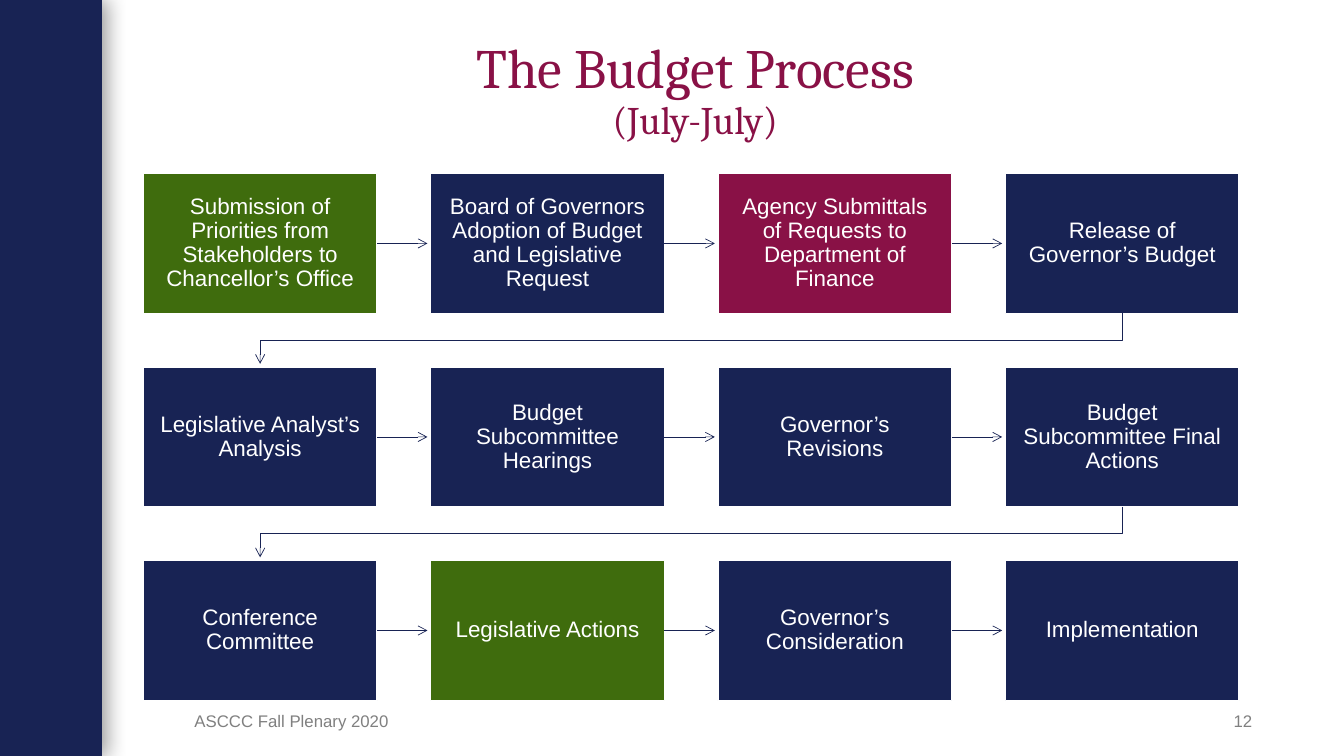
from lxml import etree
from pptx import Presentation
from pptx import util as u
from pptx.dml.color import RGBColor
from pptx.enum import shapes, text
from pptx.oxml import parse_xml
from pptx.oxml.ns import nsdecls, qn

NAVY = RGBColor(0x18, 0x23, 0x54)
GREEN = RGBColor(0x3F, 0x6C, 0x0D)
MAROON = RGBColor(0x89, 0x11, 0x46)
GRAY = RGBColor(0x80, 0x80, 0x80)
WHITE = RGBColor(0xFF, 0xFF, 0xFF)

SIDEBAR_SHADOW = (
    f'<a:effectLst {nsdecls("a")}>'
    '<a:outerShdw blurRad="190500" dist="38100" dir="0" algn="l" rotWithShape="0">'
    '<a:srgbClr val="000000"><a:alpha val="40000"/></a:srgbClr>'
    '</a:outerShdw></a:effectLst>'
)

STAGES = [
    [("Submission of Priorities from Stakeholders to Chancellor’s Office", GREEN),
     ("Board of Governors Adoption of Budget and Legislative Request", NAVY),
     ("Agency Submittals of Requests to Department of Finance", MAROON),
     ("Release of Governor’s Budget", NAVY)],
    [("Legislative Analyst’s Analysis", NAVY),
     ("Budget Subcommittee Hearings", NAVY),
     ("Governor’s Revisions", NAVY),
     ("Budget Subcommittee Final Actions", NAVY)],
    [("Conference Committee", NAVY),
     ("Legislative Actions", GREEN),
     ("Governor’s Consideration", NAVY),
     ("Implementation", NAVY)],
]


class ProcessSlide:
    body_font, title_font = "Arial", "Cambria"
    left, top = u.Inches(1.42), u.Inches(1.72)
    column, row = u.Inches(2.85), u.Inches(1.92)
    stage_width, stage_height = u.Inches(2.32), u.Inches(1.39)
    arrow_gap = u.Inches(0.03)

    def __init__(self, deck):
        self.width, self.height = deck.slide_width, deck.slide_height
        self.slide = deck.slides.add_slide(deck.slide_layouts[6])
        self.shapes = self.slide.shapes

    def share(self, x, y, w, h):
        return [round(percent * side / 100) for percent, side in
                zip((x, y, w, h), (self.width, self.height) * 2)]

    def cell(self, column, row):
        return self.left + column * self.column, self.top + row * self.row

    def rectangle(self, area, fill):
        block = self.shapes.add_shape(shapes.MSO_SHAPE.RECTANGLE, *area)
        block.shadow.inherit = False
        block.fill.solid()
        block.fill.fore_color.rgb = fill
        block.line.fill.background()
        return block

    def set_words(self, holder, lines, font, sizes, color, align, spacing=1.0):
        frame = holder.text_frame
        frame.word_wrap = True
        frame.vertical_anchor = text.MSO_ANCHOR.MIDDLE
        frame.text = "\n".join(lines)
        for paragraph, size in zip(frame.paragraphs, sizes):
            paragraph.alignment = align
            paragraph.line_spacing = spacing
            for run in paragraph.runs:
                run.font.name = font
                run.font.size = u.Pt(size)
                run.font.color.rgb = color
        return frame

    def sidebar(self, width):
        band = self.rectangle(self.share(0, 0, width, 100), NAVY)
        properties = band._element.spPr
        properties.replace(properties.find(qn("a:effectLst")),
                           parse_xml(SIDEBAR_SHADOW))

    def title(self, area, lines, sizes):
        self.set_words(self.shapes.add_textbox(*self.share(*area)), lines,
                       self.title_font, sizes, MAROON, text.PP_ALIGN.CENTER, 0.9)

    def footer(self, area, line, align):
        return self.set_words(self.shapes.add_textbox(*self.share(*area)), [line],
                              self.body_font, [12], GRAY, align)

    def stage(self, column, row, label, fill):
        block = self.rectangle((*self.cell(column, row),
                                self.stage_width, self.stage_height), fill)
        block.line.color.rgb = WHITE
        block.line.width = u.Pt(1)
        frame = self.set_words(block, [label], self.body_font, [16], WHITE,
                               text.PP_ALIGN.CENTER, 0.9)
        frame.margin_left = frame.margin_right = u.Inches(0.12)
        frame.margin_top = frame.margin_bottom = u.Inches(0.12)
        return block

    def arrow_line(self, line):
        line.color.rgb = NAVY
        line.width = u.Pt(0.5)
        etree.SubElement(line._get_or_add_ln(), qn("a:tailEnd"), type="arrow")

    def next_arrow(self, start, end):
        y = start.top + start.height // 2
        arrow = self.shapes.add_connector(
            shapes.MSO_CONNECTOR.STRAIGHT, start.left + start.width, y,
            end.left - self.arrow_gap, y)
        arrow.begin_connect(start, 3)
        self.arrow_line(arrow.line)
        etree.SubElement(arrow._element.spPr, qn("a:effectLst"))

    def return_arrow(self, start, end):
        start_x, end_x = (block.left + block.width // 2 for block in (start, end))
        bottom = start.top + start.height
        middle = (bottom + end.top) // 2
        builder = self.shapes.build_freeform(start_x, bottom)
        builder.add_line_segments([(start_x, middle), (end_x, middle),
                                   (end_x, end.top - self.arrow_gap)], close=False)
        route = builder.convert_to_shape()
        route.shadow.inherit = False
        route.fill.background()
        self.arrow_line(route.line)


def main():
    deck = Presentation()
    deck.slide_width, deck.slide_height = u.Inches(13.33), u.Inches(7.5)
    page = ProcessSlide(deck)

    page.sidebar(7.58)
    page.title((10.5, 5.33, 82.45, 13.7),
               ["The Budget Process", "(July-July)"], [39.6, 27.9])
    number = page.footer((85.67, 92.67, 7.5, 5.33), "12", text.PP_ALIGN.RIGHT)
    number.margin_right = 0
    page.footer((13.73, 92.67, 33.76, 5.33), "ASCCC Fall Plenary 2020",
                text.PP_ALIGN.LEFT)

    blocks = [[page.stage(column, row, label, fill)
               for column, (label, fill) in enumerate(stages)]
              for row, stages in enumerate(STAGES)]
    for phase in blocks:
        for start, end in zip(phase, phase[1:]):
            page.next_arrow(start, end)
    for phase, following in zip(blocks, blocks[1:]):
        page.return_arrow(phase[-1], following[0])

    deck.save("out.pptx")


if __name__ == "__main__":
    main()
